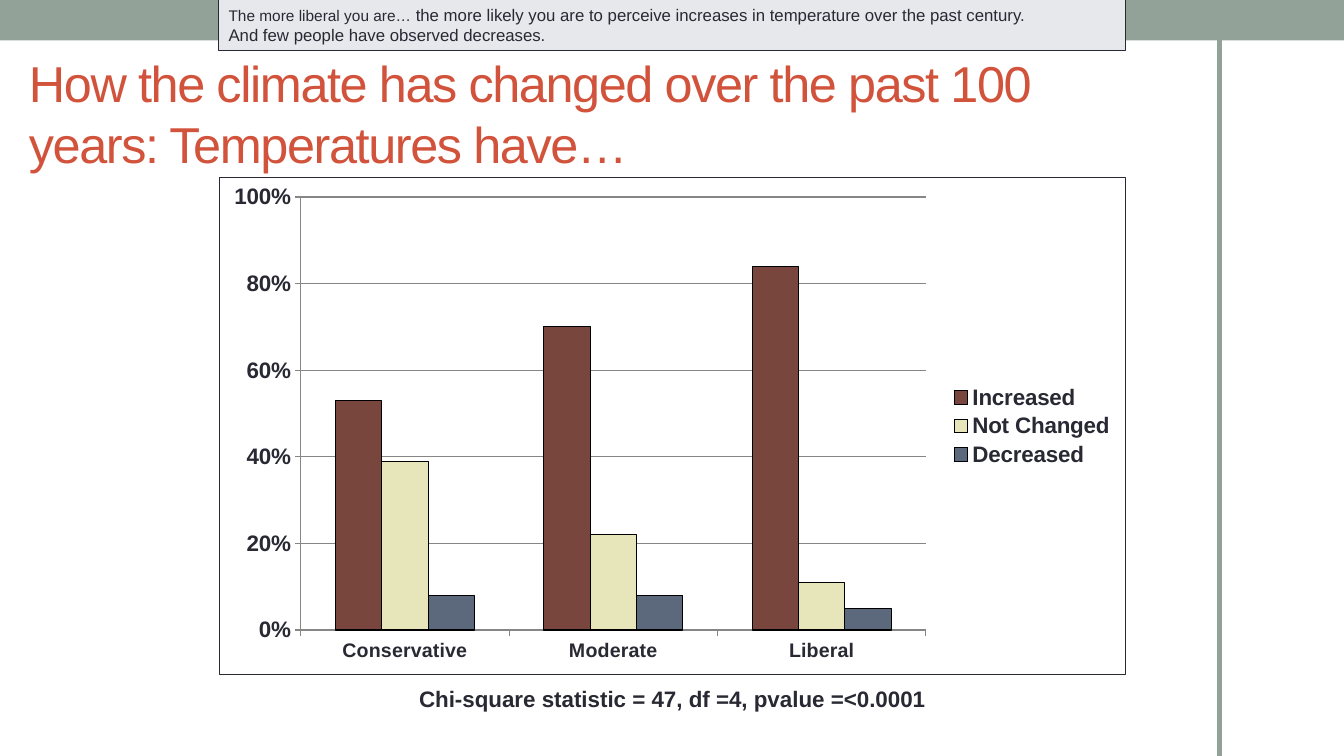
from lxml import etree
from pptx import Presentation
from pptx import util as u
from pptx.chart.data import CategoryChartData
from pptx.dml.color import RGBColor
from pptx.enum import chart as ch, shapes, text
from pptx.oxml import parse_xml
from pptx.oxml.ns import nsdecls, qn

SAGE = RGBColor(0x93, 0xA2, 0x99)
RUST = RGBColor(0xD2, 0x53, 0x3C)
INK = RGBColor(0x29, 0x29, 0x34)
PALE = RGBColor(0xE6, 0xE8, 0xEC)
GRID = RGBColor(0x86, 0x86, 0x86)
BLACK = RGBColor(0, 0, 0)
FONT = "Arial"

CATEGORIES = ["Conservative", "Moderate", "Liberal"]
SERIES = [
    ("Increased", (0.53, 0.7, 0.84), RGBColor(0x79, 0x46, 0x3D)),
    ("Not Changed", (0.39, 0.22, 0.11), RGBColor(0xE7, 0xE5, 0xBA)),
    ("Decreased", (0.08, 0.08, 0.05), RGBColor(0x5C, 0x69, 0x7C)),
]


def set_font(font, size, color=INK, bold=False):
    font.name, font.size, font.bold = FONT, u.Pt(size), bold
    font.color.rgb = color


def add_rect(slide, box, fill):
    sp = slide.shapes.add_shape(shapes.MSO_SHAPE.RECTANGLE, *box)
    sp.shadow.inherit = False
    sp.fill.solid()
    sp.fill.fore_color.rgb = fill
    sp.line.fill.background()
    return sp


def add_text(slide, box, words, size, color=INK, bold=False):
    tf = slide.shapes.add_textbox(*box).text_frame
    tf.word_wrap = True
    p = tf.paragraphs[0]
    p.text = words
    set_font(p.runs[0].font, size, color, bold)
    return tf


def add_frame(slide, left, top, width, height):
    # Top band and vertical rule
    add_rect(slide, (left, top, width, u.Cm(1.02)), SAGE)
    x = left + u.Cm(30.73)
    rule = slide.shapes.add_connector(
        shapes.MSO_CONNECTOR.STRAIGHT, x, top + u.Cm(0.97), x, top + height)
    rule.line.color.rgb = SAGE
    rule.line.width = u.Pt(3.25)
    etree.SubElement(rule._element.spPr, qn("a:effectLst"))


def add_title(slide, *box):
    tf = add_text(slide, box, "How the climate has changed over the past 100 "
                  "years: Temperatures have…", 36, RUST)
    tf.vertical_anchor = text.MSO_ANCHOR.MIDDLE
    tf.paragraphs[0].runs[0].font._element.set("spc", "-100")


def style_axis(axis, size):
    axis.major_tick_mark = ch.XL_TICK_MARK.OUTSIDE
    axis.minor_tick_mark = ch.XL_TICK_MARK.NONE
    axis.format.line.color.rgb = GRID
    set_font(axis.tick_labels.font, size, bold=True)


def add_opinion_chart(slide, *box):
    data = CategoryChartData(number_format="0%")
    data.categories = CATEGORIES
    for name, values, _ in SERIES:
        data.add_series(name, values)
    chart = slide.shapes.add_chart(
        ch.XL_CHART_TYPE.COLUMN_CLUSTERED, *box, data).chart
    set_font(chart.font, 10)
    chart.has_title = False

    # Columns
    plot = chart.plots[0]
    plot.gap_width, plot.overlap, plot.vary_by_categories = 150, 0, False
    for series, (_, _, color) in zip(plot.series, SERIES):
        series.format.fill.solid()
        series.format.fill.fore_color.rgb = color
        series.format.line.color.rgb = BLACK
        series.format.line.width = u.Pt(0.75)

    # Axes and legend
    style_axis(chart.category_axis, 14)
    axis = chart.value_axis
    style_axis(axis, 16)
    axis.minimum_scale, axis.maximum_scale, axis.major_unit = 0, 1, 0.2
    axis.tick_labels.number_format = "0%"
    axis.tick_labels.number_format_is_linked = False
    axis.major_gridlines.format.line.color.rgb = GRID
    chart.has_legend = True
    chart.legend.position = ch.XL_LEGEND_POSITION.RIGHT
    chart.legend.include_in_layout = False
    set_font(chart.legend.font, 16, bold=True)

    # Plot area position and chart border
    area = chart._chartSpace.chart.plotArea
    for old in area.findall(qn("c:layout")):
        area.remove(old)
    places = "".join(f'<c:{tag} val="{val}"/>' for tag, val in (
        ("layoutTarget", "inner"), ("xMode", "edge"), ("yMode", "edge"),
        ("x", 0.09), ("y", 0.04), ("w", 0.69), ("h", 0.87)))
    area.insert(0, parse_xml(
        f'<c:layout {nsdecls("c")}><c:manualLayout>{places}'
        '</c:manualLayout></c:layout>'))
    chart._chartSpace.chart.addnext(parse_xml(
        f'<c:spPr {nsdecls("c", "a")}>'
        '<a:solidFill><a:srgbClr val="FFFFFF"/></a:solidFill>'
        f'<a:ln w="{u.Pt(0.75)}"><a:solidFill><a:srgbClr val="{INK}"/>'
        '</a:solidFill></a:ln></c:spPr>'))


def add_statistic(slide, *box):
    tf = add_text(slide, box, "Chi-square statistic = 47, df =4, "
                  "pvalue =<0.0001", 16, bold=True)
    tf.paragraphs[0].alignment = text.PP_ALIGN.CENTER


def add_takeaway(slide, *box):
    sp = add_rect(slide, box, PALE)
    sp.line.color.rgb = INK
    sp.line.width = u.Pt(0.75)
    tf = sp.text_frame
    tf.word_wrap = True
    tf.vertical_anchor = text.MSO_ANCHOR.TOP
    lines = [
        [("The more liberal you are… ", 11),
         ("the more likely you are to perceive increases in temperature "
          "over the past century.", 12)],
        [("And few people have observed decreases.", 12)],
    ]
    for i, runs in enumerate(lines):
        p = tf.add_paragraph() if i else tf.paragraphs[0]
        p.alignment = text.PP_ALIGN.LEFT
        for words, size in runs:
            r = p.add_run()
            r.text = words
            set_font(r.font, size)


def main():
    prs = Presentation()
    prs.slide_width, prs.slide_height = u.Cm(33.87), u.Cm(19.05)
    slide = prs.slides.add_slide(prs.slide_layouts[6])
    left, width = u.Cm(5.51), u.Cm(22.86)
    add_frame(slide, 0, 0, prs.slide_width, prs.slide_height)
    add_title(slide, u.Cm(0.48), u.Cm(1.47), u.Cm(26.92), u.Cm(2.74))
    add_opinion_chart(slide, left, u.Cm(4.45), width, u.Cm(12.57))
    add_statistic(slide, u.Cm(9.58), u.Cm(17.15), u.Cm(14.73), u.Cm(1.07))
    add_takeaway(slide, left, 0, width, u.Cm(1.27))
    prs.save("out.pptx")


if __name__ == "__main__":
    main()
